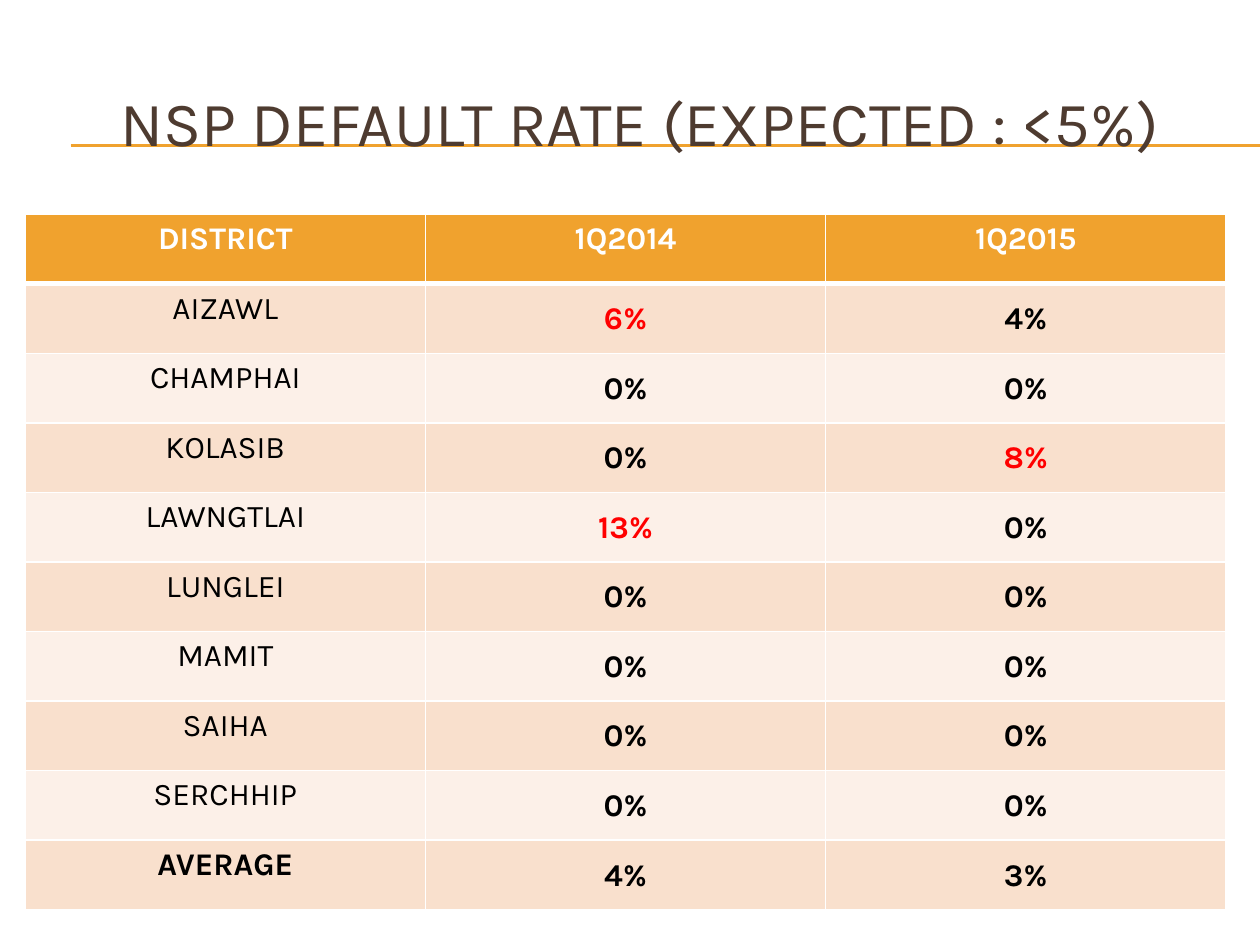
"""Build the slide on default rates by district."""
from dataclasses import dataclass

from lxml import etree
from pptx import Presentation
from pptx import util as u
from pptx.dml.color import RGBColor
from pptx.enum import shapes, text
from pptx.oxml import ns

FONT = "Karla"
GOLD = RGBColor(0xF0, 0xA2, 0x2E)
BROWN = RGBColor(0x4E, 0x3B, 0x30)
WHITE = RGBColor(0xFF, 0xFF, 0xFF)
BLACK = RGBColor(0, 0, 0)
RED = RGBColor(0xFF, 0, 0)
BANDS = (RGBColor(0xF9, 0xE0, 0xCD), RGBColor(0xFC, 0xF0, 0xE8))
LIMIT = 5
HEADS = ("DISTRICT", "1Q2014", "1Q2015")


@dataclass(frozen=True)
class Rate:
    name: str
    first: int
    second: int
    bold: bool = False


RATES = (
    Rate("AIZAWL", 6, 4),
    Rate("CHAMPHAI", 0, 0),
    Rate("KOLASIB", 0, 8),
    Rate("LAWNGTLAI", 13, 0),
    Rate("LUNGLEI", 0, 0),
    Rate("MAMIT", 0, 0),
    Rate("SAIHA", 0, 0),
    Rate("SERCHHIP", 0, 0),
    Rate("AVERAGE", 4, 3, bold=True),
)


def write(frame, words: str, *, size: float = 18, color: RGBColor = BLACK,
          bold: bool = False) -> None:
    para = frame.paragraphs[0]
    para.alignment = text.PP_ALIGN.CENTER
    run = para.add_run()
    run.text = words
    run.font.name = FONT
    run.font.size = u.Pt(size)
    run.font.bold = bold
    run.font.color.rgb = color


def rule(slide, top: float) -> None:
    line = slide.shapes.add_connector(
        shapes.MSO_CONNECTOR.STRAIGHT,
        u.Inches(0.56), u.Inches(top), u.Inches(10), u.Inches(top))
    line.line.color.rgb = GOLD
    line.line.width = u.Pt(0.75)
    etree.SubElement(line._element.spPr, ns.qn("a:effectLst"))


def title(slide, words: str) -> None:
    box = slide.shapes.add_textbox(
        u.Inches(0.33), u.Inches(0.5), u.Inches(9.5), u.Inches(0.92))
    frame = box.text_frame
    frame.word_wrap = True
    frame.vertical_anchor = text.MSO_ANCHOR.MIDDLE
    write(frame, words, size=36, color=BROWN)


def paint(cell, fill: RGBColor, top: float = 1, base: float = 1) -> None:
    props = cell._tc.get_or_add_tcPr()
    for side, width in (("L", 1), ("R", 1), ("T", top), ("B", base)):
        edge = etree.SubElement(props, ns.qn(f"a:ln{side}"), w=str(u.Pt(width)))
        solid = etree.SubElement(edge, ns.qn("a:solidFill"))
        etree.SubElement(solid, ns.qn("a:srgbClr"), val=str(WHITE))
    cell.fill.solid()
    cell.fill.fore_color.rgb = fill


def score(cell, value: int) -> None:
    cell.vertical_anchor = text.MSO_ANCHOR.MIDDLE
    cell.margin_left = cell.margin_right = cell.margin_top = u.Inches(0.01)
    cell.margin_bottom = 0
    write(cell.text_frame, f"{value}%", bold=True,
          color=RED if value > LIMIT else BLACK)


def table(slide) -> None:
    grid = slide.shapes.add_table(
        len(RATES) + 1, len(HEADS), u.Inches(0.2), u.Inches(1.7),
        u.Inches(9.53), u.Inches(5.52)).table
    for cell, head in zip(grid.rows[0].cells, HEADS):
        paint(cell, GOLD, base=3)
        write(cell.text_frame, head, color=WHITE, bold=True)
    for num, rate in enumerate(RATES):
        cells = list(grid.rows[num + 1].cells)
        for cell in cells:
            paint(cell, BANDS[num % 2], top=1 if num else 3)
        write(cells[0].text_frame, rate.name, bold=rate.bold)
        score(cells[1], rate.first)
        score(cells[2], rate.second)


def main() -> None:
    deck = Presentation()
    deck.slide_width, deck.slide_height = u.Inches(10), u.Inches(7.5)
    slide = deck.slides.add_slide(deck.slide_layouts[6])
    for top in (1.15, 1.16):
        rule(slide, top)
    title(slide, "NSP DEFAULT RATE (EXPECTED : <5%)")
    table(slide)
    deck.save("out.pptx")


if __name__ == "__main__":
    main()
